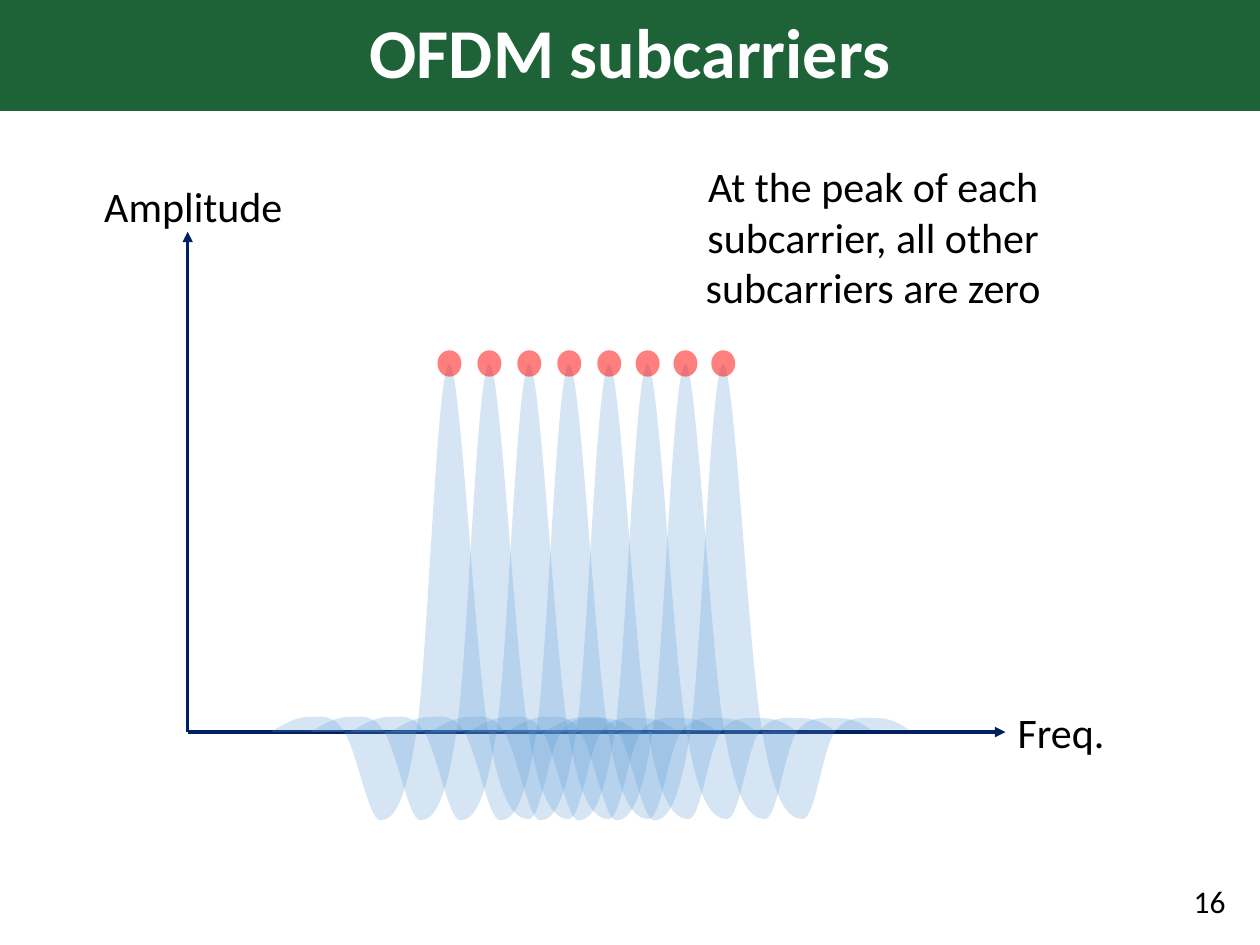
from lxml.etree import SubElement
from pptx import Presentation
from pptx.dml.color import RGBColor
from pptx.enum.shapes import MSO_CONNECTOR as Connector, MSO_SHAPE as Shape
from pptx.enum.text import MSO_ANCHOR as Anchor, MSO_AUTO_SIZE as AutoSize, PP_ALIGN as Align
from pptx.oxml.ns import qn
from pptx.util import Inches, Pt

GREEN = RGBColor(0x1E, 0x62, 0x38)
NAVY = RGBColor(0x00, 0x20, 0x60)
BLUE = RGBColor(0x5B, 0x9B, 0xD5)
RED = RGBColor(0xFF, 0x00, 0x00)
BLACK = RGBColor(0x00, 0x00, 0x00)
WHITE = RGBColor(0xFF, 0xFF, 0xFF)

FONT = "Calibri"
WIDTH, HEIGHT = Inches(10), Inches(7.5)
COLUMNS, ROWS = 1000, 750
ORIGIN_COLUMN, AXIS_ROW = 149, 581
PEAK_ROW = 288.5
PEAKS = [356.7 + 31.7 * i for i in range(5)] + [514 + 30 * i for i in range(3)]
DOT_WIDTH, DOT_HEIGHT = 19, 21

WAVE_START = (-142, 0)
WAVE_CURVES = [
    ((-132, -6), (-122, -12), (-112, -12)),
    ((-102, -12), (-93, -15), (-84, -1)),
    ((-74, 13), (-64, 70), (-55, 70)),
    ((-45, 70), (-35, 59), (-26, -1)),
    ((-17, -61), (-10, -292), (0, -292)),
    ((9, -292), (20, -60), (31, 0)),
    ((41, 60), (53, 69), (63, 69)),
    ((73, 69), (79, 12), (89, -1)),
    ((99, -14), (113, -11), (123, -11)),
    ((132, -11), (140, -7), (147, -2)),
]


def across(columns):
    """Turn grid columns into a length."""
    return round(WIDTH * columns / COLUMNS)


def down(rows):
    """Turn grid rows into a length."""
    return round(HEIGHT * rows / ROWS)


def grid_box(left, top, width, height):
    """Turn a box in grid units into lengths."""
    return across(left), down(top), across(width), down(height)


def paint(shape, color, opacity=100):
    """Fill a shape, without line or shadow."""
    shape.shadow.inherit = False
    shape.line.fill.background()
    shape.fill.solid()
    shape.fill.fore_color.rgb = color
    if opacity < 100:
        color_element = next(shape._element.spPr.iter(qn("a:srgbClr")))
        SubElement(color_element, qn("a:alpha"), val=str(opacity * 1000))


def write(shape, text, size, color=BLACK, align=Align.CENTER, anchor=Anchor.TOP, bold=False):
    """Write one paragraph into a shape and return it."""
    frame = shape.text_frame
    frame.word_wrap = True
    frame.vertical_anchor = anchor
    paragraph = frame.paragraphs[0]
    paragraph.alignment = align
    run = paragraph.add_run()
    run.text = text
    run.font.name = FONT
    run.font.size = Pt(size)
    run.font.bold = bold
    run.font.color.rgb = color
    return paragraph


def add_title(slide, text):
    """Add the title band."""
    band = slide.shapes.add_shape(Shape.RECTANGLE, *grid_box(0, 0, COLUMNS, 88))
    paint(band, GREEN)
    paragraph = write(band, text, 40, WHITE, anchor=Anchor.MIDDLE, bold=True)
    paragraph.line_spacing = 0.9


def add_page_number(slide, text):
    """Add the number in the bottom right corner."""
    box = slide.shapes.add_textbox(*grid_box(757.5, 695, 225, 40))
    write(box, text, 18, align=Align.RIGHT, anchor=Anchor.MIDDLE)


def add_label(slide, text, *box):
    """Add a centred text box that grows with its text."""
    label = slide.shapes.add_textbox(*grid_box(*box))
    write(label, text, 24)
    label.text_frame.auto_size = AutoSize.SHAPE_TO_FIT_TEXT


def add_axis(slide, end_column, end_row, weight):
    """Add an arrow from the origin of the diagram."""
    axis = slide.shapes.add_connector(
        Connector.STRAIGHT, across(ORIGIN_COLUMN), down(AXIS_ROW), across(end_column), down(end_row)
    )
    axis.line.color.rgb = NAVY
    axis.line.width = Pt(weight)
    SubElement(axis.line._get_or_add_ln(), qn("a:tailEnd"), type="triangle")
    SubElement(axis._element.spPr, qn("a:effectLst"))


def bend(shape):
    """Turn each three line segments of a freeform into one cubic curve."""
    outline = next(shape._element.spPr.iter(qn("a:path")))
    segments = outline.findall(qn("a:lnTo"))
    for first in range(0, len(segments), 3):
        curve = SubElement(outline, qn("a:cubicBezTo"))
        for segment in segments[first:first + 3]:
            curve.append(segment[0])
            outline.remove(segment)


def add_subcarrier(slide, peak):
    """Add the wave of one subcarrier."""
    points = [WAVE_START] + [point for curve in WAVE_CURVES for point in curve]
    start, *rest = [(across(peak + x), down(AXIS_ROW + y)) for x, y in points]
    builder = slide.shapes.build_freeform(*start)
    builder.add_line_segments(rest, close=False)
    wave = builder.convert_to_shape()
    bend(wave)
    paint(wave, BLUE, 25)


def add_peak_dot(slide, peak):
    """Add the dot that marks a peak."""
    box = (peak - DOT_WIDTH / 2, PEAK_ROW - DOT_HEIGHT / 2, DOT_WIDTH, DOT_HEIGHT)
    paint(slide.shapes.add_shape(Shape.OVAL, *grid_box(*box)), RED, 50)


def main():
    """Build the slide and save it."""
    presentation = Presentation()
    presentation.slide_width, presentation.slide_height = WIDTH, HEIGHT
    slide = presentation.slides.add_slide(presentation.slide_layouts[6])

    add_title(slide, "OFDM subcarriers")
    add_page_number(slide, "16")
    add_axis(slide, 798, AXIS_ROW, 2)
    for peak in PEAKS:
        add_subcarrier(slide, peak)
    for peak in PEAKS:
        add_peak_dot(slide, peak)
    add_axis(slide, ORIGIN_COLUMN, 184, 1.5)
    add_label(slide, "Freq.", 771.6, 556, 141, 50)
    add_label(slide, "Amplitude", 60, 138, 187, 50)
    message = "At the peak of each subcarrier, all other subcarriers are zero"
    add_label(slide, message, 492.5, 122.6, 401, 131)
    presentation.save("out.pptx")


if __name__ == "__main__":
    main()
